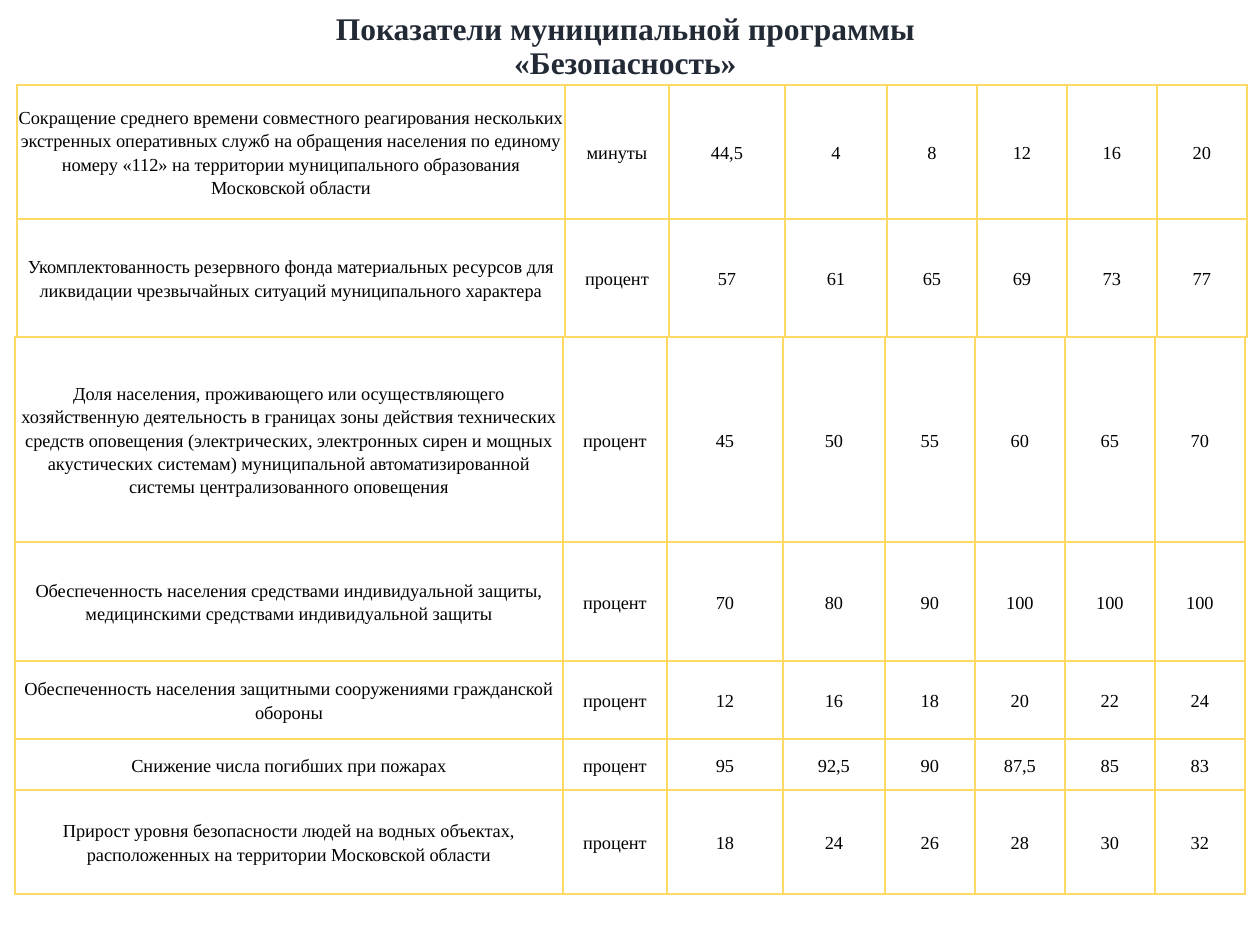
from dataclasses import dataclass
from typing import NamedTuple

from lxml.etree import SubElement as Sub
from pptx import Presentation as Deck
from pptx.dml.color import RGBColor as Rgb
from pptx.enum.text import MSO_ANCHOR as Anchor, PP_ALIGN as Align
from pptx.oxml.ns import qn
from pptx.util import Emu, Pt

SCALE = 914400 / 126
COLS = (548, 104, 116, 102, 90, 90, 90, 90)


@dataclass(frozen=True)
class Theme:
    face: str = "Times New Roman"
    title: str = "222A35"
    text: str = "000000"
    rule: str = "FFD966"
    head: float = 18
    body: float = 10.5
    line: float = 1


class Row(NamedTuple):
    high: int
    name: str
    unit: str
    vals: str


class Grid(NamedTuple):
    left: int
    top: int
    rows: tuple[Row, ...]


THEME = Theme()
TITLE = "Показатели муниципальной программы\v«Безопасность»"
GRIDS = (
    Grid(15, 337, (
        Row(205, "Доля населения, проживающего или осуществляющего хозяйственную "
            "деятельность в границах зоны действия технических средств оповещения "
            "(электрических, электронных сирен и мощных акустических системам) "
            "муниципальной автоматизированной системы централизованного оповещения",
            "процент", "45 50 55 60 65 70"),
        Row(119, "Обеспеченность населения средствами индивидуальной защиты, "
            "медицинскими средствами индивидуальной защиты",
            "процент", "70 80 90 100 100 100"),
        Row(78, "Обеспеченность населения защитными сооружениями гражданской обороны",
            "процент", "12 16 18 20 22 24"),
        Row(51, "Снижение числа погибших при пожарах",
            "процент", "95 92,5 90 87,5 85 83"),
        Row(104, "Прирост уровня безопасности людей на водных объектах, "
            "расположенных на территории Московской области",
            "процент", "18 24 26 28 30 32"),
    )),
    Grid(17, 85, (
        Row(134, "Сокращение среднего времени совместного реагирования нескольких "
            "экстренных оперативных служб на обращения населения по единому номеру "
            "«112» на территории муниципального образования Московской области",
            "минуты", "44,5 4 8 12 16 20"),
        Row(118, "Укомплектованность резервного фонда материальных ресурсов для "
            "ликвидации чрезвычайных ситуаций муниципального характера",
            "процент", "57 61 65 69 73 77"),
    )),
)


def px(num: int) -> Emu:
    """Turn pixels into EMU."""
    return Emu(round(num * SCALE))


def apply(item, form: dict) -> None:
    """Set each named value on an item."""
    for key, val in form.items():
        setattr(item, key, val)


def write(frame, text: str, size: float, color: str, lead: float, bold: bool) -> None:
    """Fill a text frame with one centred paragraph."""
    frame.text = text
    para = frame.paragraphs[0]
    apply(para, {"alignment": Align.CENTER, "line_spacing": lead})
    for run in para.runs:
        apply(run.font, {"name": THEME.face, "size": Pt(size), "bold": bold})
        run.font.color.rgb = Rgb.from_string(color)


def edge(cell) -> None:
    """Rule all four sides of a cell."""
    props = cell._tc.get_or_add_tcPr()
    for spot, side in enumerate(("a:lnL", "a:lnR", "a:lnT", "a:lnB")):
        line = Sub(props, qn(side), w=str(Pt(THEME.line)))
        Sub(Sub(line, qn("a:solidFill")), qn("a:srgbClr"), val=THEME.rule)
        props.remove(line)
        props.insert(spot, line)


def draw(slide, grid: Grid) -> None:
    """Draw one table of indicators."""
    high = sum(row.high for row in grid.rows)
    table = slide.shapes.add_table(
        len(grid.rows), len(COLS), px(grid.left), px(grid.top), px(sum(COLS)), px(high)
    ).table
    apply(table, {"first_row": False, "horz_banding": False})
    for col, wide in zip(table.columns, COLS):
        col.width = px(wide)
    for line, row in zip(table.rows, grid.rows):
        line.height = px(row.high)
        for cell, text in zip(line.cells, (row.name, row.unit, *row.vals.split())):
            apply(cell, {"margin_left": px(1), "margin_right": px(1), "margin_top": 0,
                         "margin_bottom": 0, "vertical_anchor": Anchor.MIDDLE})
            cell.fill.background()
            edge(cell)
            write(cell.text_frame, text, THEME.body, THEME.text, 1.15, False)


def main() -> None:
    """Build and save the slide."""
    deck = Deck()
    apply(deck, {"slide_width": px(1260), "slide_height": px(945)})
    slide = deck.slides.add_slide(deck.slide_layouts[6])
    frame = slide.shapes.add_textbox(px(139), px(-3), px(973), px(100)).text_frame
    apply(frame, {"word_wrap": True, "vertical_anchor": Anchor.MIDDLE})
    write(frame, TITLE, THEME.head, THEME.title, 0.9, True)
    for grid in GRIDS:
        draw(slide, grid)
    deck.save("out.pptx")


if __name__ == "__main__":
    main()
